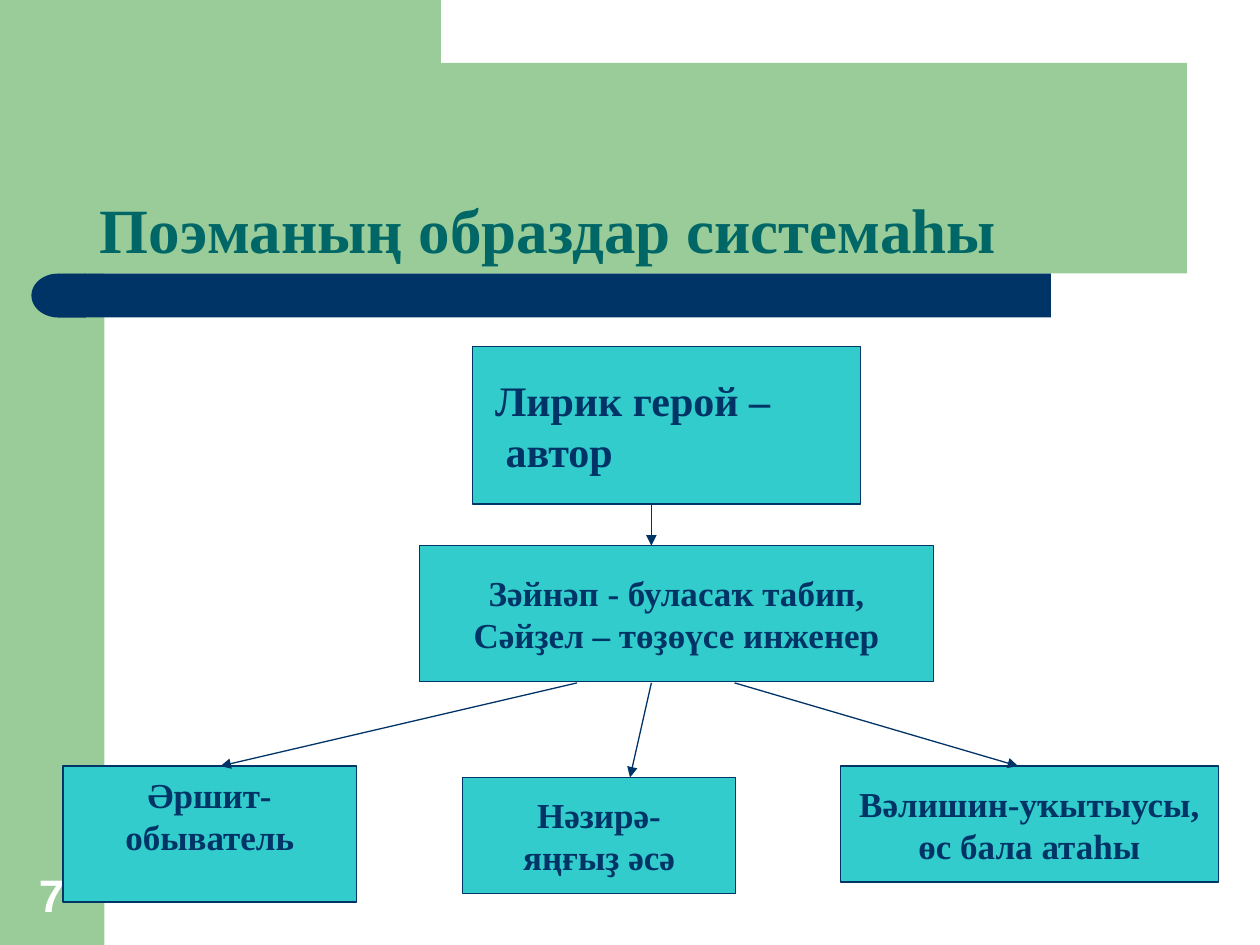
"""Build a slide with the system of characters of a poem as a tree of boxes."""
import pptx
import pptx.dml.color
import pptx.enum.shapes
import pptx.enum.text
import pptx.oxml
import pptx.oxml.ns
import pptx.util

Inches = pptx.util.Inches
Pt = pptx.util.Pt
MSO = pptx.enum.shapes.MSO_SHAPE
ALIGN = pptx.enum.text.PP_ALIGN
ANCHOR = pptx.enum.text.MSO_ANCHOR
GREEN, NAVY, TEAL, DARK_TEAL, WHITE = "99CC99", "003366", "33CCCC", "006666", "FFFFFF"


def paint(shape, fill, line=None):
    shape.shadow.inherit = False
    shape.fill.solid()
    shape.fill.fore_color.rgb = pptx.dml.color.RGBColor.from_string(fill)
    if line:
        shape.line.color.rgb = pptx.dml.color.RGBColor.from_string(line)
        shape.line.width = Pt(0.75)
    else:
        shape.line.fill.background()


def write(shape, lines, size, color, align, anchor, font="Times New Roman", wrap=False):
    tf = shape.text_frame
    tf.word_wrap = wrap
    tf.vertical_anchor = anchor
    tf.text = "\n".join(lines)
    for p in tf.paragraphs:
        p.alignment = align
        p.font.name = font
        p.font.size = Pt(size)
        p.font.bold = True
        p.font.color.rgb = pptx.dml.color.RGBColor.from_string(color)
    return tf


prs = pptx.Presentation()
prs.slide_width, prs.slide_height = Inches(10), Inches(7.5)
s = prs.slides.add_slide(prs.slide_layouts[6])

side = s.shapes.add_shape(MSO.RECTANGLE, 0, 0, Inches(0.83), Inches(7.5))
paint(side, GREEN)

corner = [(3.5, 0), (3.5, 0.83), (1.11, 0.83), (1.03, 0.85), (0.93, 0.92), (0.86, 1.04),
          (0.83, 1.16), (0.83, 1.28), (0.5, 1.28)]
builder = s.shapes.build_freeform(Inches(0.5), 0)
builder.add_line_segments([(Inches(x), Inches(y)) for x, y in corner], close=True)
paint(builder.convert_to_shape(), GREEN)

bar = s.shapes.add_shape(MSO.RECTANGLE, Inches(0.67), Inches(2.17), Inches(7.67), Inches(0.35))
paint(bar, NAVY)
cap = s.shapes.add_shape(MSO.FLOWCHART_DELAY, Inches(0.25), Inches(2.17), Inches(0.43), Inches(0.35))
paint(cap, NAVY)
cap.element.spPr.find(pptx.oxml.ns.qn("a:xfrm")).set("flipH", "1")

number = s.shapes.add_textbox(Inches(0.09), Inches(6.83), Inches(0.64), Inches(0.53))
write(number, ["7"], 26, WHITE, ALIGN.CENTER, ANCHOR.BOTTOM, "Arial", True)

title = s.shapes.add_shape(MSO.RECTANGLE, 0, Inches(0.5), Inches(9.42), Inches(1.67))
paint(title, GREEN)
tf = write(title, ["Поэманың образдар системаһы"], 36, DARK_TEAL, ALIGN.LEFT, ANCHOR.BOTTOM, wrap=True)
tf.margin_left = Inches(0.79)
tf.paragraphs[0].line_spacing = 0.9

boxes = [
    (3.75, 2.75, 3.08, 1.25, 24, ALIGN.LEFT, 0.18, 0.05, ["Лирик герой –", " автор"]),
    (0.5, 6.08, 2.33, 1.08, 20, ALIGN.CENTER, 0.1, 0.34, ["Әршит-", "обыватель"]),
    (3.33, 4.33, 4.08, 1.08, 20, ALIGN.CENTER, 0.1, 0.05,
     ["Зәйнәп - буласаҡ табип,", "Сәйҙел – төҙөүсе инженер"]),
    (3.67, 6.17, 2.17, 0.92, 20, ALIGN.CENTER, 0.1, 0.05, ["Нәзирә-", "яңғыҙ әсә"]),
    (6.67, 6.08, 3, 0.92, 20, ALIGN.CENTER, 0.1, 0.05, ["Вәлишин-уҡытыусы,", "өс бала атаһы"]),
]
for x, y, w, h, size, align, left, bottom, lines in boxes:
    sp = s.shapes.add_shape(MSO.RECTANGLE, Inches(x), Inches(y), Inches(w), Inches(h))
    paint(sp, TEAL, NAVY)
    tf = write(sp, lines, size, NAVY, align, ANCHOR.MIDDLE, wrap=align == ALIGN.LEFT)
    tf.margin_left = Inches(left)
    tf.margin_bottom = Inches(bottom)

arrows = [(5.17, 4, 5.17, 4.33), (4.58, 5.42, 1.75, 6.08),
          (5.83, 5.42, 8.08, 6.08), (5.17, 5.42, 5, 6.17)]
for ends in arrows:
    arrow = s.shapes.add_connector(pptx.enum.shapes.MSO_CONNECTOR.STRAIGHT, *map(Inches, ends))
    arrow.line.color.rgb = pptx.dml.color.RGBColor.from_string(NAVY)
    arrow.line.width = Pt(0.75)
    head = pptx.oxml.parse_xml(f'<a:tailEnd {pptx.oxml.ns.nsdecls("a")} type="triangle"/>')
    arrow.line._get_or_add_ln().append(head)
    arrow.element.spPr.append(pptx.oxml.parse_xml(f'<a:effectLst {pptx.oxml.ns.nsdecls("a")}/>'))

prs.save("out.pptx")
